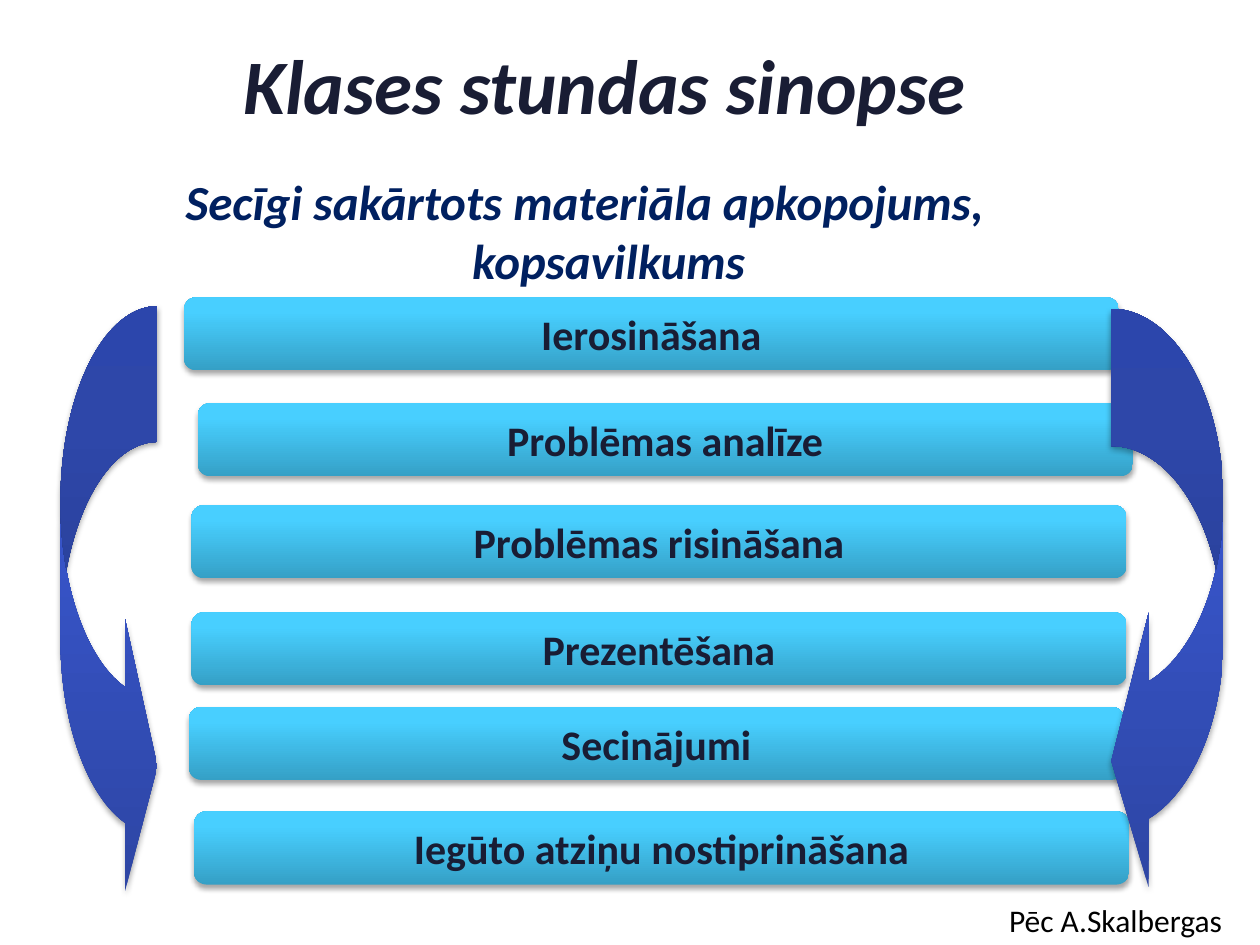
import copy

import pptx
import pptx.dml.color
import pptx.enum.shapes
import pptx.enum.text
import pptx.oxml
import pptx.oxml.ns
import pptx.util

RGB = pptx.dml.color.RGBColor
SHAPE = pptx.enum.shapes.MSO_SHAPE
ALIGN = pptx.enum.text.PP_ALIGN
ANCHOR = pptx.enum.text.MSO_ANCHOR
Inches, Pt = pptx.util.Inches, pptx.util.Pt
qn = pptx.oxml.ns.qn
NS = pptx.oxml.ns.nsdecls("a")

INK = RGB(0x19, 0x1D, 0x34)
NAVY = RGB(0x00, 0x20, 0x60)
BLACK = RGB(0x00, 0x00, 0x00)
SKY = (RGB(0x35, 0xA0, 0xC6), RGB(0x48, 0xCF, 0xFF), RGB(0x49, 0xCF, 0xFF))
ROYAL = (RGB(0x2D, 0x45, 0xA3), RGB(0x3A, 0x59, 0xD4), RGB(0x37, 0x58, 0xD7))
GRADIENT_POSITIONS = (0, 0.8, 1)

# Content: texts with their box, and the lesson stages with left and top
TITLE = ("Klases stundas sinopse", (0.3, 0.16, 9, 1.01))
SUBTITLE = ("Secīgi sakārtots materiāla apkopojums, kopsavilkums",
            (0.39, 1.31, 8.5, 6.19))
CREDIT = ("Pēc A.Skalbergas", (7.91, 7.1, 1.91, 0.4))
STAGES = [
    ("Ierosināšana", 1.46, 2.36),
    ("Problēmas analīze", 1.57, 3.2),
    ("Problēmas risināšana", 1.52, 4.01),
    ("Prezentēšana", 1.52, 4.86),
    ("Secinājumi", 1.5, 5.61),
    ("Iegūto atziņu nostiprināšana", 1.54, 6.44),
]
STAGE_SIZE = (7.42, 0.58)
# Arrows: box, adjustments, mirrored
ARROWS = [
    ((0.48, 2.43, 0.77, 4.73), (1.4, 2.8, 0.333), False),
    ((8.82, 2.45, 0.89, 4.68), (1.225, 2.45, 0.333), True),
]

TITLE_FONT = dict(size=Pt(44), bold=True, italic=True)
SUBTITLE_FONT = dict(size=Pt(28), bold=True, italic=True)
STAGE_FONT = dict(size=Pt(24), bold=True)
CREDIT_FONT = dict(size=Pt(18))

OUTLINE = (f'<a:ln {NS} w="17780"><a:solidFill><a:srgbClr val="FCFCFE"/>'
           '</a:solidFill></a:ln>')
SHADOW = (f'<a:outerShdw {NS} blurRad="39370" dist="22860" dir="5400000" '
          'rotWithShape="0"><a:srgbClr val="000000"><a:alpha val="35000"/>'
          '</a:srgbClr></a:outerShdw>')


def write(shape, text, font, color, align=ALIGN.CENTER, anchor=ANCHOR.MIDDLE,
          wrap=True):
    frame = shape.text_frame
    frame.word_wrap, frame.vertical_anchor = wrap, anchor
    paragraph = frame.paragraphs[0]
    paragraph.alignment = align
    run = paragraph.add_run()
    run.text = text
    for name, value in dict(font, name="Calibri").items():
        setattr(run.font, name, value)
    run.font.color.rgb = color
    return paragraph


def add_text(slide, content, *args, **options):
    text, box = content
    return write(slide.shapes.add_textbox(*map(Inches, box)), text, *args, **options)


def add_glossy(slide, kind, box, adjustments, colors):
    shape = slide.shapes.add_shape(kind, *map(Inches, box))
    for index, value in enumerate(adjustments):
        shape.adjustments[index] = value
    # Three-stop gradient running from bottom to top
    shape.fill.gradient()
    shape.fill.gradient_angle = 90
    properties = shape._element.spPr
    stops = properties.find(qn("a:gradFill")).find(qn("a:gsLst"))
    stops.append(copy.deepcopy(stops[-1]))
    for stop, position, color in zip(shape.fill.gradient_stops,
                                     GRADIENT_POSITIONS, colors):
        stop.position, stop.color.rgb = position, color
    shape.line.fill.background()
    # Soft shadow below
    shape.shadow.inherit = False
    properties.find(qn("a:effectLst")).append(pptx.oxml.parse_xml(SHADOW))
    return shape


def main():
    deck = pptx.Presentation()
    deck.slide_width, deck.slide_height = Inches(10), Inches(7.5)
    slide = deck.slides.add_slide(deck.slide_layouts[6])

    # Title with a thin light outline, and subtitle with a hanging indent
    title = add_text(slide, TITLE, TITLE_FONT, INK)
    title.runs[0].font._element.insert(0, pptx.oxml.parse_xml(OUTLINE))
    subtitle = add_text(slide, SUBTITLE, SUBTITLE_FONT, NAVY, anchor=ANCHOR.TOP)
    indent = Inches(0.38)
    for name, value in dict(marL=indent, indent=-indent).items():
        subtitle._p.get_or_add_pPr().set(name, str(value))

    # Lesson stages
    for text, left, top in STAGES:
        bar = add_glossy(slide, SHAPE.ROUNDED_RECTANGLE,
                         (left, top, *STAGE_SIZE), (0.167,), SKY)
        write(bar, text, STAGE_FONT, INK, wrap=False)

    # Arrows from the first stage to the last
    for box, adjustments, mirrored in ARROWS:
        arrow = add_glossy(slide, SHAPE.CURVED_RIGHT_ARROW, box, adjustments, ROYAL)
        if mirrored:
            arrow._element.spPr.find(qn("a:xfrm")).set("flipH", "1")

    # Credit
    add_text(slide, CREDIT, CREDIT_FONT, BLACK, ALIGN.LEFT, ANCHOR.TOP, wrap=False)

    deck.save("out.pptx")


if __name__ == "__main__":
    main()
